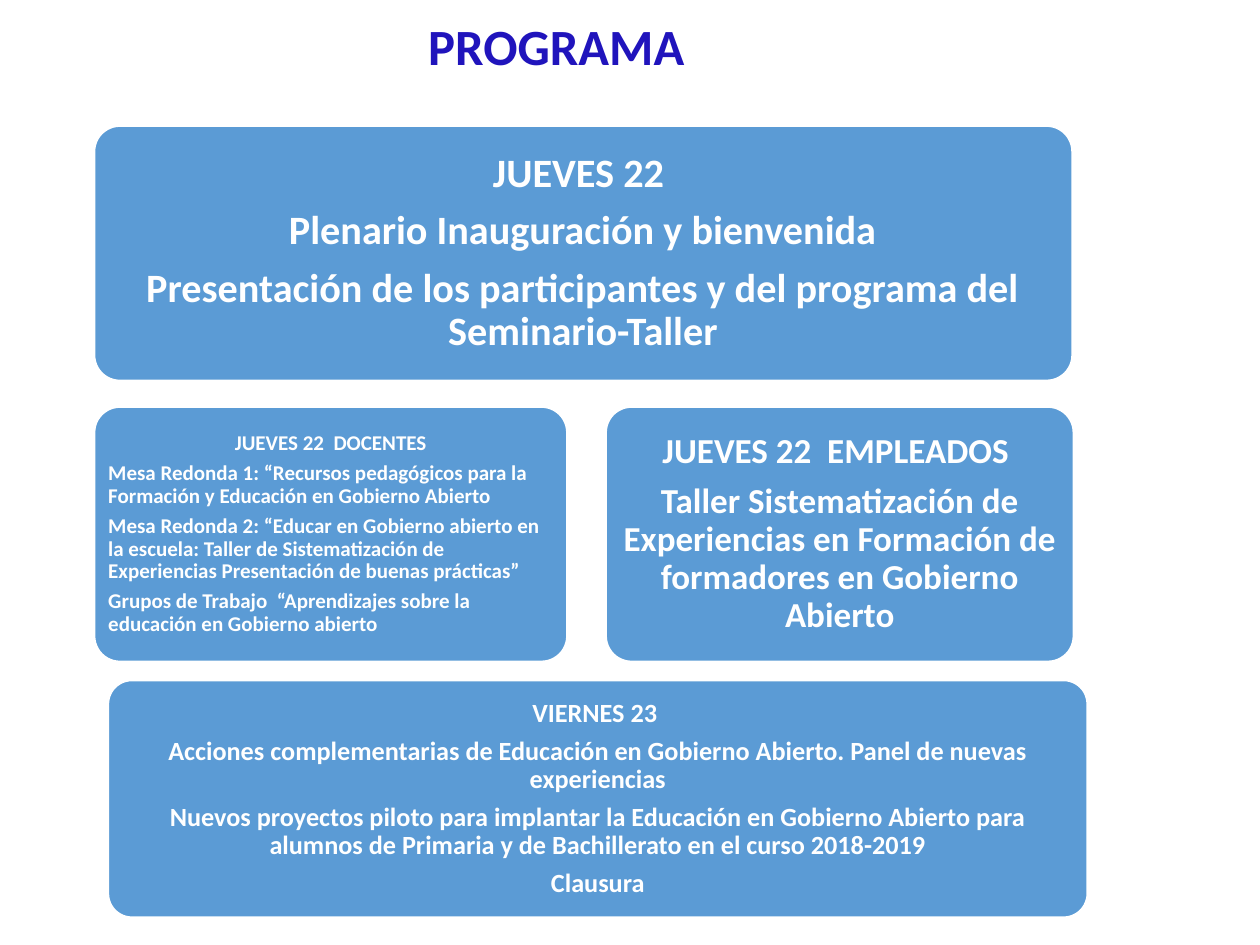
from pptx import Presentation
from pptx.dml.color import RGBColor
from pptx.enum.shapes import MSO_SHAPE
from pptx.enum.text import MSO_ANCHOR, MSO_AUTO_SIZE, PP_ALIGN
from pptx.util import Inches, Pt

FONT = "Calibri"
BLUE, WHITE, TITLE_BLUE = "5B9BD5", "FFFFFF", "2014BC"
CENTER, LEFT = PP_ALIGN.CENTER, PP_ALIGN.LEFT

# Each session: position and size, text size, inset, body alignment, paragraphs
SESSIONS = [
    ((0.75, 1, 7.76, 2.02), 23, 0.1, CENTER, [
        "JUEVES 22 ",
        "Plenario Inauguración y bienvenida",
        "Presentación de los participantes y del programa del Seminario-Taller",
    ]),
    ((0.75, 3.23, 3.75, 2.02), 12, 0.05, LEFT, [
        "JUEVES 22  DOCENTES",
        "Mesa Redonda 1: “Recursos pedagógicos para la Formación y Educación "
        "en Gobierno Abierto",
        "Mesa Redonda 2: “Educar en Gobierno abierto en la escuela: Taller de "
        "Sistematización de Experiencias Presentación de buenas prácticas”",
        "Grupos de Trabajo  “Aprendizajes sobre la educación en Gobierno abierto",
    ]),
    ((4.81, 3.23, 3.71, 2.02), 20, 0.08, CENTER, [
        "JUEVES 22  EMPLEADOS ",
        "Taller Sistematización de Experiencias en Formación de formadores "
        "en Gobierno Abierto",
    ]),
    ((0.86, 5.4, 7.77, 1.88), 15, 0.06, CENTER, [
        "VIERNES 23 ",
        "Acciones complementarias de Educación en Gobierno Abierto. "
        "Panel de nuevas experiencias",
        "Nuevos proyectos piloto para implantar la Educación en Gobierno Abierto "
        "para alumnos de Primaria y de Bachillerato en el curso 2018-2019",
        "Clausura",
    ]),
]


def color(value):
    return RGBColor.from_string(value)


def add_span(para, text, size, text_color):
    span = para.add_run()
    span.text = text
    span.font.name = FONT
    span.font.size = Pt(size)
    span.font.bold = True
    span.font.color.rgb = color(text_color)


def add_title(page):
    box = page.shapes.add_textbox(*map(Inches, (3.3, 0.07, 2.4, 0.59)))
    frame = box.text_frame
    frame.word_wrap = True
    frame.auto_size = MSO_AUTO_SIZE.SHAPE_TO_FIT_TEXT
    para = frame.paragraphs[0]
    para.alignment = PP_ALIGN.JUSTIFY
    add_span(para, "PROGRAMA ", 29, TITLE_BLUE)


def add_session(page, place, size, inset, alignment, texts):
    box = page.shapes.add_shape(MSO_SHAPE.ROUNDED_RECTANGLE, *map(Inches, place))
    box.adjustments[0] = 0.1
    box.shadow.inherit = False
    box.fill.solid()
    box.fill.fore_color.rgb = color(BLUE)
    box.line.color.rgb = color(WHITE)
    box.line.width = Pt(1)

    frame = box.text_frame
    frame.word_wrap = True
    frame.vertical_anchor = MSO_ANCHOR.MIDDLE
    frame.margin_left = frame.margin_right = Inches(inset)
    frame.margin_top = frame.margin_bottom = Inches(inset)
    for index, text in enumerate(texts):
        para = frame.add_paragraph() if index else frame.paragraphs[0]
        para.alignment = alignment if index else CENTER
        para.line_spacing = 0.9
        para.space_after = Pt(0.35 * size)
        add_span(para, text, size, WHITE)


deck = Presentation()
deck.slide_width, deck.slide_height = Inches(10), Inches(7.5)
page = deck.slides.add_slide(deck.slide_layouts[6])

add_title(page)
for session in SESSIONS:
    add_session(page, *session)

deck.save("out.pptx")
